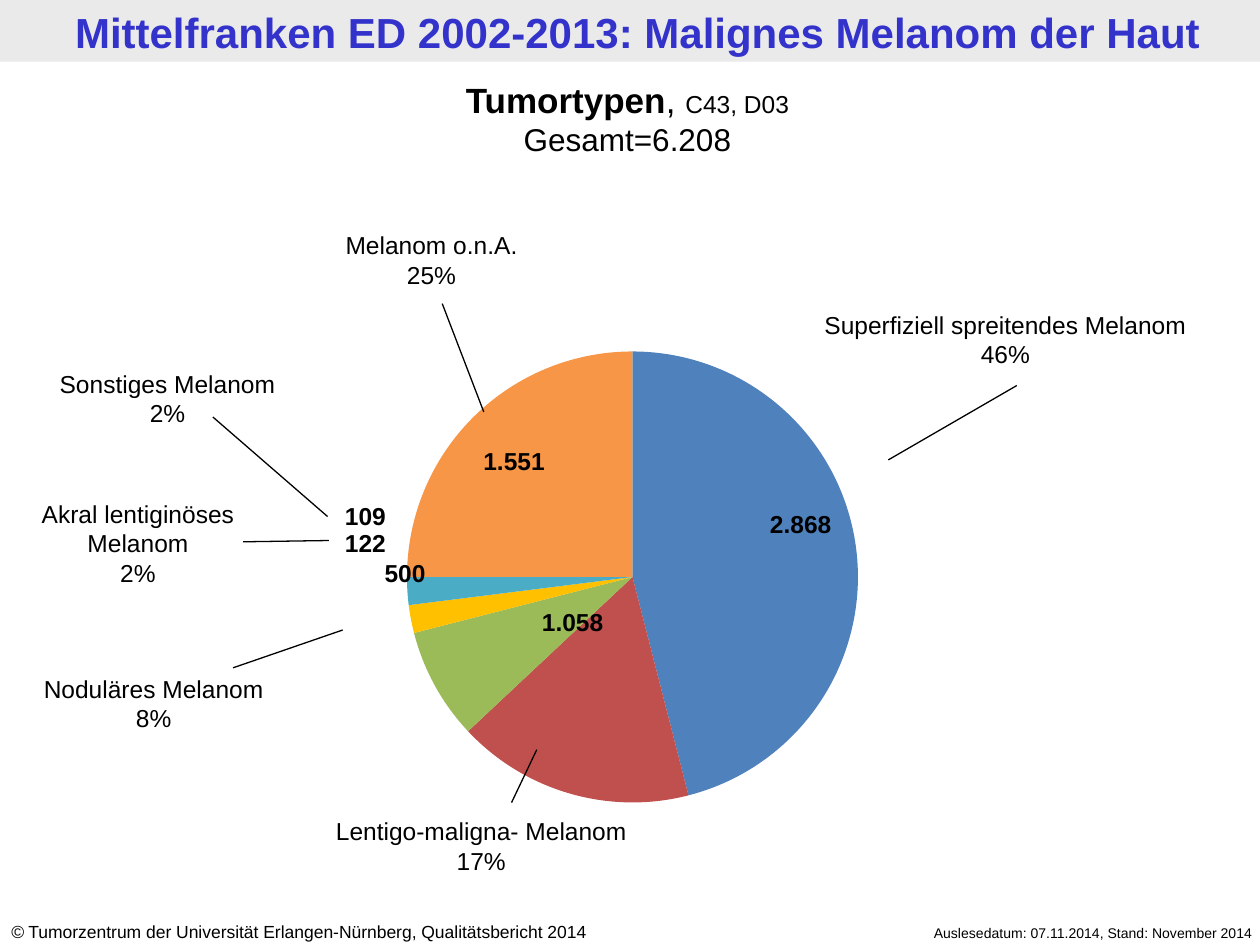
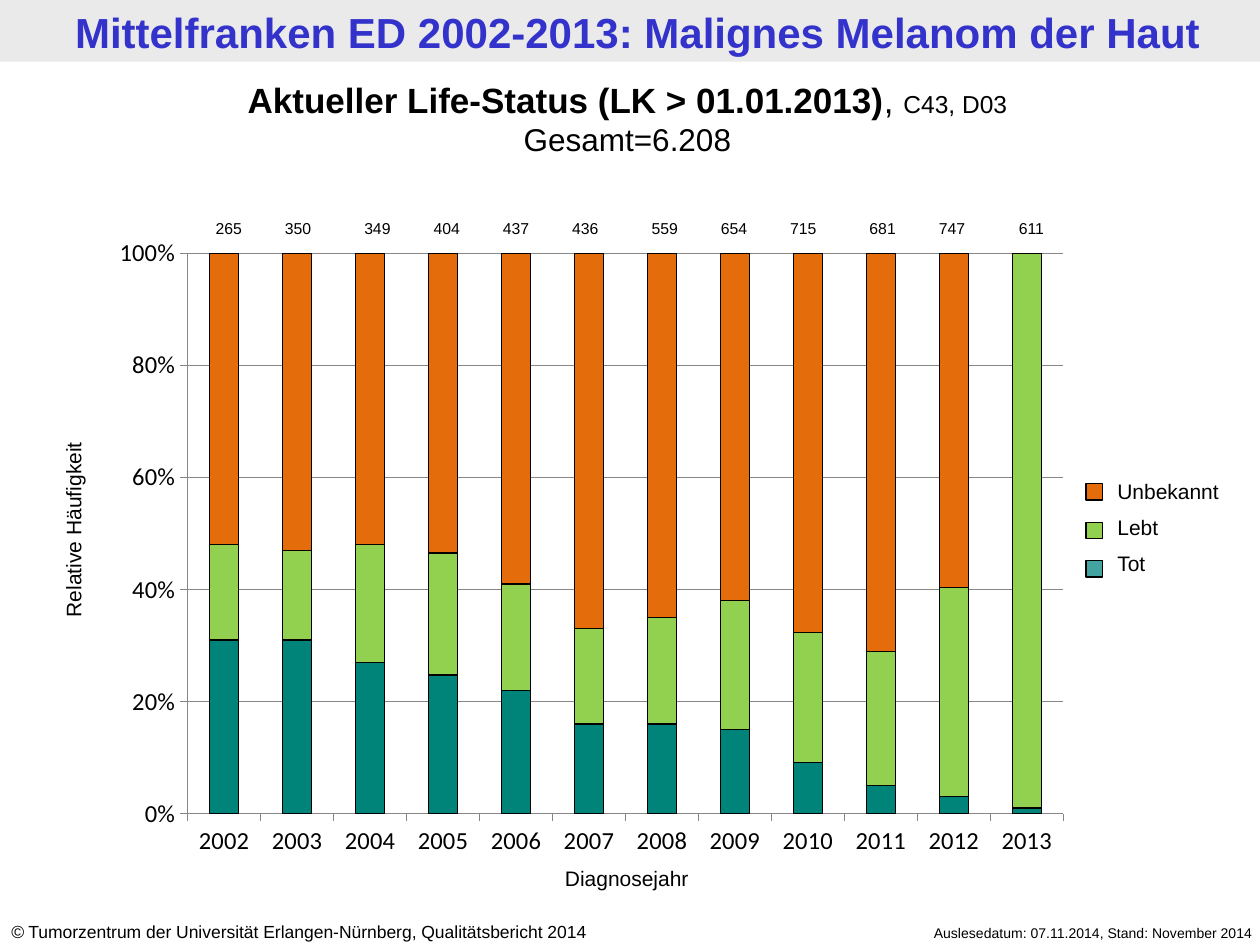
from pptx import Presentation
from pptx.chart.data import CategoryChartData
from pptx.dml.color import RGBColor
from pptx.enum.chart import XL_CHART_TYPE as ChartType, XL_TICK_MARK as TickMark
from pptx.enum.shapes import MSO_CONNECTOR as Connector, MSO_SHAPE as Shape
from pptx.enum.text import MSO_ANCHOR as Anchor, MSO_AUTO_SIZE as AutoSize, PP_ALIGN as Align
from pptx.oxml import parse_xml
from pptx.oxml.ns import nsdecls, qn
from pptx.util import Inches, Pt

TITLE = "Mittelfranken ED 2002-2013: Malignes Melanom der Haut"
STAND = "Auslesedatum: 07.11.2014, Stand: November 2014"
COPYRIGHT = " Tumorzentrum der Universität Erlangen-Nürnberg, Qualitätsbericht 2014"
BLACK, GRID = "000000", "878787"
ORANGE, GREEN, TEAL = "E46C0A", "92D050", "008378"

TUMOR_TYPES = [
    ("Superfiziell spreitendes Melanom", 46, "4F81BD", (6.15, 2.41, 3.66, 0.57)),
    ("Lentigo-maligna- Melanom", 17, "C0504D", (2.48, 6.43, 2.68, 0.57)),
    ("Noduläres Melanom", 8, "9BBB59", (0.09, 5.3, 2.26, 0.57)),
    ("Akral lentiginöses Melanom", 2, "FFC000", (0.2, 3.91, 1.79, 0.81)),
    ("Sonstiges Melanom", 2, "4BACC6", (0.28, 2.88, 2.1, 0.57)),
    ("Melanom o.n.A.", 25, "F79646", (2.32, 1.78, 2.21, 0.57)),
]
CASE_COUNTS = [
    ("500", 2.8, 4.38, 0.83), ("1.058", 4.13, 4.77, 0.83), ("2.868", 5.94, 3.99, 0.83),
    ("122", 2.64, 4.14, 0.52), ("109", 2.64, 3.93, 0.52), ("1.551", 3.58, 3.49, 1),
]
LEADERS = [
    (4.26, 5.95, 4.06, 6.37), (2.72, 5, 1.85, 5.3), (2.61, 4.29, 1.93, 4.3),
    (7.05, 3.65, 8.07, 3.06), (3.84, 3.27, 3.51, 2.41), (2.6, 4.1, 1.69, 3.31),
]
LIFE_STATUS = [
    ("Tot", TEAL, (31, 31, 27, 25, 22, 16, 16, 15, 9, 5, 3, 1)),
    ("Lebt", GREEN, (17, 16, 21, 22, 19, 17, 19, 23, 23, 24, 37, 99)),
    ("Unbekannt", ORANGE, (52, 53, 52, 54, 59, 67, 65, 62, 67, 71, 59, 0)),
]
YEAR_TOTALS = [
    (265, 1.54), (350, 2.09), (349, 2.72), (404, 3.27), (437, 3.82), (436, 4.37),
    (559, 5), (654, 5.55), (715, 6.1), (681, 6.73), (747, 7.28), (611, 7.91),
]


def color(value):
    """Turn a hex string into a colour."""
    return RGBColor.from_string(value)


def inches(values):
    """Turn numbers into lengths."""
    return [Inches(value) for value in values]


class ReportPage:
    """Style and current slide of the report."""

    def __init__(self, deck, topic):
        """Start a slide with band, title, footers and heading."""
        self.page = deck.slides.add_slide(deck.slide_layouts[5])
        self.shapes = self.page.shapes
        band = self.rectangle((0, 0, 10, 0.49), "EAEAEA")
        self.shapes._spTree.insert(2, band._element)
        self.title()
        self.text((6.65, 7.29, 3.39, 0.24), [STAND], 8, Align.RIGHT)
        footer = self.text((-0.01, 7.26, 5.24, 0.27), ["©"], 10, Align.LEFT)
        para = footer.text_frame.paragraphs[0]
        para.runs[0].font.italic = True
        self.span(para, COPYRIGHT, 10)
        self.heading(topic)

    def font(self, font, size, hex_color=BLACK, bold=False, name="Arial"):
        """Format a font."""
        font.name, font.size, font.bold = name, Pt(size), bold
        font.color.rgb = color(hex_color)

    def title(self):
        """Place the report title over the band."""
        box = self.shapes.title
        box.left, box.top, box.width, box.height = inches((0.06, 0.01, 10, 0.49))
        frame = box.text_frame
        frame.text = TITLE
        frame.auto_size = AutoSize.NONE
        frame.vertical_anchor = Anchor.MIDDLE
        frame.margin_top = frame.margin_bottom = Inches(0.04)
        frame.paragraphs[0].alignment = Align.CENTER
        self.font(frame.paragraphs[0].runs[0].font, 24, "3333CC", True)

    def heading(self, topic):
        """Name the topic with its codes and the total."""
        box = self.text((-0.04, 0.57, 10.04, 0.74), [topic, "Gesamt=6.208"], 18)
        para = box.text_frame.paragraphs[0]
        self.font(para.runs[0].font, 20, bold=True)
        self.span(para, ", ", 20)
        self.span(para, "C43, D03", 14)

    def span(self, para, text, size):
        """Append a run to a paragraph."""
        run = para.add_run()
        run.text = text
        self.font(run.font, size)

    def text(self, place, lines, size, align=Align.CENTER, bold=False, gap=0, margin=0.1):
        """Add a text box with one paragraph per line."""
        box = self.shapes.add_textbox(*inches(place))
        frame = box.text_frame
        frame.word_wrap = True
        frame.margin_left = frame.margin_right = Inches(margin)
        frame.text = "\n".join(lines)
        for index, para in enumerate(frame.paragraphs):
            para.alignment = align
            if index and gap:
                para.space_before = Pt(gap)
            self.font(para.runs[0].font, size, bold=bold)
        return box

    def rectangle(self, place, fill, outlined=False):
        """Add a filled rectangle."""
        box = self.shapes.add_shape(Shape.RECTANGLE, *inches(place))
        box.shadow.inherit = False
        box.fill.solid()
        box.fill.fore_color.rgb = color(fill)
        if outlined:
            self.outline(box.line)
        else:
            box.line.fill.background()
        return box

    def outline(self, line, hex_color=BLACK):
        """Format a thin line."""
        line.color.rgb = color(hex_color)
        line.width = Pt(0.75)

    def leader(self, ends):
        """Add a thin line between two points."""
        line = self.shapes.add_connector(Connector.STRAIGHT, *inches(ends))
        self.outline(line.line)
        line._element.spPr.append(parse_xml(f"<a:effectLst {nsdecls('a')}/>"))

    def chart(self, kind, place, plot_place, categories, series):
        """Add a chart whose plot area fills the given inch rectangle."""
        data = CategoryChartData()
        data.categories = categories
        for name, values in series:
            data.add_series(name, values)
        chart = self.shapes.add_chart(kind, *inches(place), data).chart
        chart.has_title = chart.has_legend = False
        self.font(chart.font, 18, name="Calibri")
        left, top, width, height = place
        x, y, w, h = plot_place
        shares = {"x": (x - left) / width, "y": (y - top) / height, "w": w / width, "h": h / height}
        parts = "".join(f'<c:{key} val="{share:.4f}"/>' for key, share in shares.items())
        layout = parse_xml(
            f"<c:layout {nsdecls('c')}><c:manualLayout>"
            '<c:layoutTarget val="inner"/><c:xMode val="edge"/><c:yMode val="edge"/>'
            f"{parts}</c:manualLayout></c:layout>")
        area = chart._chartSpace.chart.plotArea
        for old in area.findall(qn("c:layout")):
            area.remove(old)
        area.insert(0, layout)
        return chart

    def axis(self, axis):
        """Format a chart axis."""
        axis.major_tick_mark = TickMark.OUTSIDE
        axis.minor_tick_mark = TickMark.NONE
        self.font(axis.tick_labels.font, 14, name="Calibri")
        self.outline(axis.format.line, GRID)


def tumor_types(deck):
    """Build the pie slide."""
    report = ReportPage(deck, "Tumortypen")
    shares = [share for _, share, _, _ in TUMOR_TYPES]
    names = [name for name, _, _, _ in TUMOR_TYPES]
    chart = report.chart(ChartType.PIE, (2.4, 2.66, 5.24, 3.86), (3.23, 2.79, 3.58, 3.58),
                         names, [("Anteil", shares)])
    pie = chart.plots[0].series[0]
    for index, (name, share, fill, place) in enumerate(TUMOR_TYPES):
        point = pie.points[index].format
        point.fill.solid()
        point.fill.fore_color.rgb = color(fill)
        point.line.fill.background()
        report.text(place, [name, f"{share}%"], 14)
    for count, left, top, width in CASE_COUNTS:
        report.text((left, top, width, 0.34), [count], 14, bold=True, margin=0.04)
    for ends in LEADERS:
        report.leader(ends)


def life_status(deck):
    """Build the stacked column slide."""
    report = ReportPage(deck, "Aktueller Life-Status (LK > 01.01.2013)")
    years = [str(year) for year in range(2002, 2014)]
    chart = report.chart(ChartType.COLUMN_STACKED_100, (0.79, 1.79, 7.8, 5.11),
                         (1.49, 2.01, 6.95, 4.45), years,
                         [(name, values) for name, _, values in LIFE_STATUS])
    plot = chart.plots[0]
    plot.gap_width, plot.overlap = 150, 100
    for series, (_, fill, _) in zip(plot.series, LIFE_STATUS):
        series.format.fill.solid()
        series.format.fill.fore_color.rgb = color(fill)
        report.outline(series.format.line)
    report.axis(chart.category_axis)
    values = chart.value_axis
    report.axis(values)
    values.minimum_scale, values.maximum_scale, values.major_unit = 0, 1, 0.2
    values.tick_labels.number_format = "0%"
    values.tick_labels.number_format_is_linked = False
    values.has_major_gridlines = True
    report.outline(values.major_gridlines.format.line, GRID)

    report.text((-0.62, 4.05, 2.41, 0.31), ["Relative Häufigkeit"], 12).rotation = 270
    report.text((3.85, 6.82, 2.25, 0.31), ["Diagnosejahr"], 12)
    for total, left in YEAR_TOTALS:
        report.text((left, 1.69, 0.55, 0.25), [str(total)], 9)

    legend = [name for name, _, _ in reversed(LIFE_STATUS)]
    report.text((8.77, 3.75, 1.23, 0.91), legend, 12, Align.LEFT, gap=6)
    for index, fill in enumerate((ORANGE, GREEN, "008380")):
        swatch = report.rectangle((8.62, 3.84 + 0.305 * index, 0.13, 0.13), fill, True)
    tint = swatch.fill._xPr.find(qn("a:solidFill"))[0]
    tint.append(parse_xml(f'<a:alpha {nsdecls("a")} val="74000"/>'))


def main():
    """Build and save the deck."""
    deck = Presentation()
    deck.slide_width, deck.slide_height = Inches(10), Inches(7.5)
    tumor_types(deck)
    life_status(deck)
    deck.save("out.pptx")


if __name__ == "__main__":
    main()
